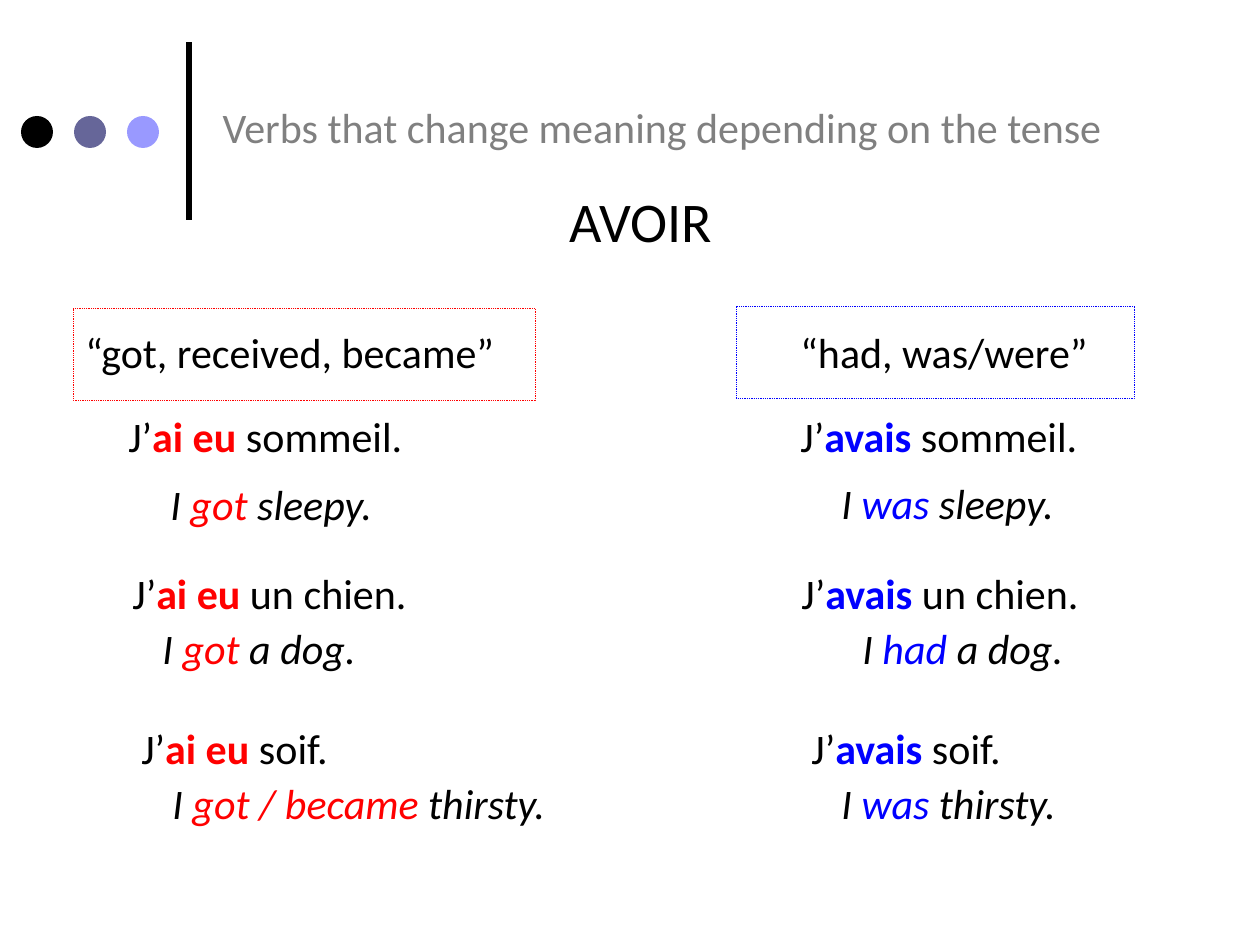
"""Builds a slide contrasting two past tenses of the French verb avoir."""
from dataclasses import dataclass

from lxml import etree
from pptx import Presentation
from pptx.dml.color import RGBColor
from pptx.enum.dml import MSO_LINE
from pptx.enum.shapes import MSO_CONNECTOR, MSO_SHAPE
from pptx.enum.text import MSO_ANCHOR, MSO_AUTO_SIZE, PP_ALIGN
from pptx.oxml.ns import qn
from pptx.util import Emu, Pt

STRAIGHT = MSO_CONNECTOR.STRAIGHT
OVAL, RECTANGLE = MSO_SHAPE.OVAL, MSO_SHAPE.RECTANGLE
DOTTED = MSO_LINE.ROUND_DOT
TOP = MSO_ANCHOR.TOP
GROW = MSO_AUTO_SIZE.SHAPE_TO_FIT_TEXT
LEFT, CENTER = PP_ALIGN.LEFT, PP_ALIGN.CENTER


@dataclass(frozen=True)
class Theme:
    font: str = "Calibri"
    ink: RGBColor = RGBColor(0, 0, 0)
    heading: RGBColor = RGBColor(128, 128, 128)
    slate: RGBColor = RGBColor(102, 102, 153)
    lilac: RGBColor = RGBColor(153, 153, 255)
    perfect: RGBColor = RGBColor(255, 0, 0)
    imperfect: RGBColor = RGBColor(0, 0, 255)
    body_size: Pt = Pt(24)
    verb_size: Pt = Pt(32)


theme = Theme()


def px(*lengths):
    return [Emu(round(length * 914400 / 126)) for length in lengths]


def write(holder, parts, accent=theme.ink, italic=False, size=theme.body_size, align=LEFT):
    frame = holder.text_frame
    frame.word_wrap = True
    frame.auto_size = GROW
    frame.vertical_anchor = TOP
    line = frame.paragraphs[0]
    line.alignment = align
    line.space_before = Pt(6)
    line.font.name = theme.font
    line.font.size = size
    line.font.italic = italic
    for index, words in enumerate(parts):
        run = line.add_run()
        run.text = words
        stressed = index == 1
        run.font.color.rgb = accent if stressed else theme.ink
        run.font.bold = stressed and not italic
    return line


deck = Presentation()
deck.slide_width, deck.slide_height = px(1260, 945)
slide = deck.slides.add_slide(deck.slide_layouts[5])
shapes = slide.shapes

divider = shapes.add_connector(STRAIGHT, *px(189, 220, 189, 42))
divider.line.color.rgb = theme.ink
divider.line.width = Pt(3)
etree.SubElement(divider._element.spPr, qn("a:effectLst"))

for column, color in enumerate((theme.ink, theme.slate, theme.lilac)):
    dot = shapes.add_shape(OVAL, *px(21 + 53 * column, 116, 32, 32))
    dot.shadow.inherit = False
    dot.fill.solid()
    dot.fill.fore_color.rgb = color
    dot.line.fill.background()

heading = shapes.title
heading.left, heading.top, heading.width, heading.height = px(210, 95, 1008, 63)
heading_line = write(heading, ["Verbs that change meaning depending on the tense"])
heading_line.runs[0].font.color.rgb = theme.heading

verb = shapes.add_textbox(*px(189, 147, 903, 115))
verb_line = write(verb, ["AVOIR"], size=theme.verb_size, align=CENTER)
verb_line.line_spacing = 1.5

tenses = [
    (theme.perfect, "“got, received, became”", (73, 320, 462, 63), (73, 308, 462, 92), [
        (116, 404, 336, ["J’", "ai eu ", "sommeil."]),
        (158, 472, 336, ["I ", "got ", "sleepy."]),
        (120, 561, 336, ["J’", "ai eu ", "un chien."]),
        (150, 616, 336, ["I ", "got ", "a dog."]),
        (129, 716, 336, ["J’", "ai eu ", "soif."]),
        (160, 771, 407, ["I ", "got / became ", "thirsty."]),
    ]),
    (theme.imperfect, "“had, was/were”", (788, 320, 336, 63), (736, 306, 399, 92), [
        (788, 404, 336, ["J’", "avais ", "sommeil."]),
        (829, 471, 336, ["I ", "was ", "sleepy."]),
        (789, 561, 336, ["J’", "avais", " un chien."]),
        (850, 616, 336, ["I ", "had ", "a dog."]),
        (799, 716, 336, ["J’", "avais ", "soif."]),
        (829, 771, 336, ["I ", "was ", "thirsty."]),
    ]),
]

for accent, meaning, meaning_box, border_box, examples in tenses:
    for left, top, width, parts in examples:
        example = shapes.add_textbox(*px(left, top, width, 63))
        write(example, parts, accent, italic=parts[0] == "I ")
    write(shapes.add_textbox(*px(*meaning_box)), [meaning])
    border = shapes.add_shape(RECTANGLE, *px(*border_box))
    border.shadow.inherit = False
    border.fill.background()
    border.line.color.rgb = accent
    border.line.width = Pt(0.5)
    border.line.dash_style = DOTTED

deck.save("out.pptx")
